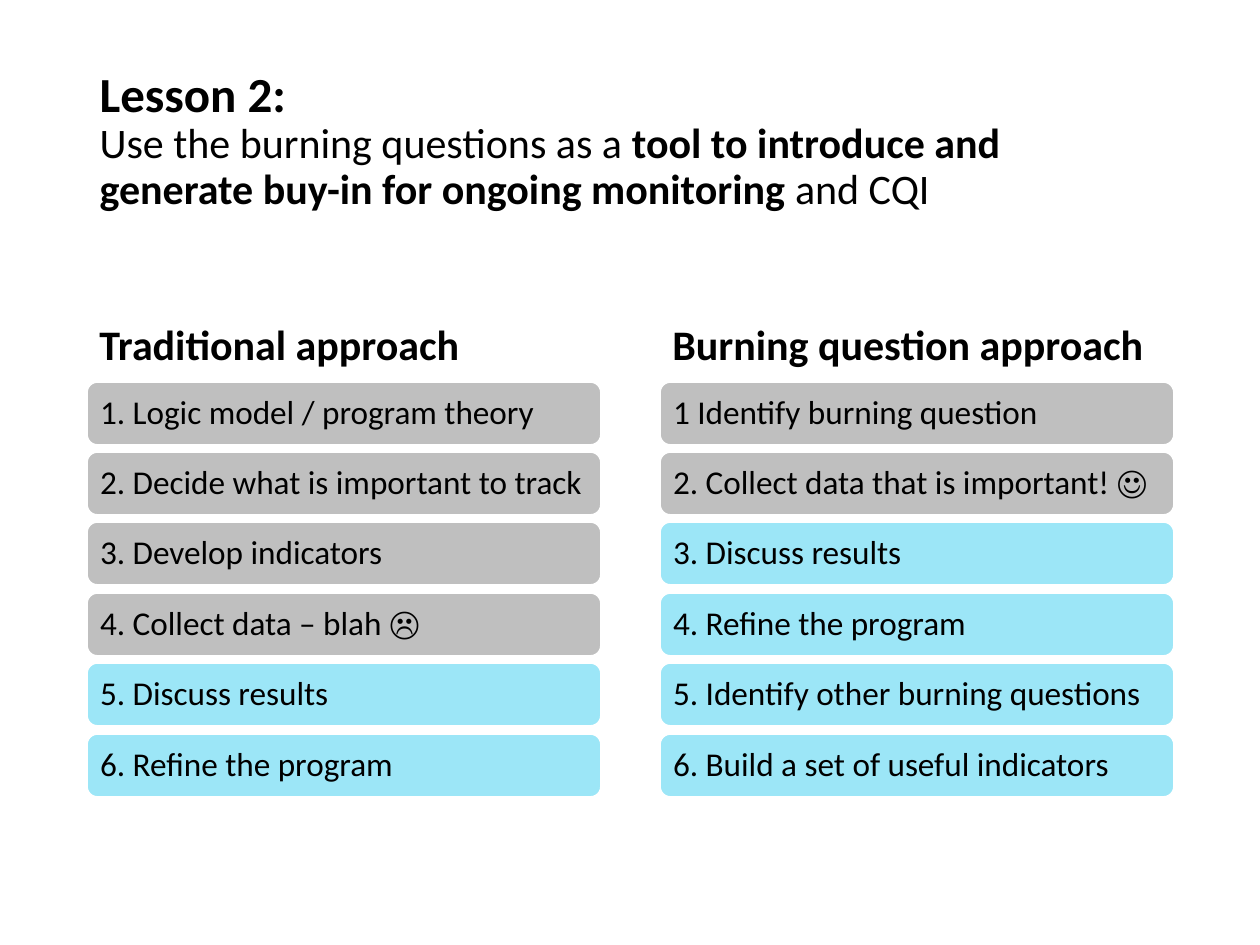
from copy import deepcopy

from pptx import Presentation
from pptx.dml.color import RGBColor as RGB
from pptx.enum.shapes import MSO_SHAPE as Shape
from pptx.enum.text import MSO_ANCHOR as Anchor, MSO_AUTO_SIZE as Auto, PP_ALIGN as Align
from pptx.util import Pt

SCALE = 914400 / 126
COLORS = {"ink": "000000", "gray": "BFBFBF", "blue": "9CE6F7", "edge": "FFFFFF"}


def px(n):
    return round(n * SCALE)


class Deck:
    font = "Calibri"

    def __init__(self, wide, high):
        self.prs = Presentation()
        self.prs.slide_width, self.prs.slide_height = px(wide), px(high)
        self.slide = self.prs.slides.add_slide(self.prs.slide_layouts[5])

    def color(self, name):
        return RGB.from_string(COLORS[name])

    def style(self, run, size, bold=False):
        font = run.font
        font.name, font.size, font.bold = self.font, Pt(size), bold
        font.color.rgb = self.color("ink")

    def frame(self, shape):
        frame = shape.text_frame
        frame.word_wrap = True
        frame.auto_size = Auto.NONE
        frame.vertical_anchor = Anchor.MIDDLE
        para = frame.paragraphs[0]
        para.alignment, para.line_spacing = Align.LEFT, 0.9
        return frame

    def title(self, x, y, w, h, head, parts):
        shape = self.slide.shapes.title
        shape.left, shape.top, shape.width, shape.height = map(px, (x, y, w, h))
        para = self.frame(shape).paragraphs[0]
        first = para.add_run()
        first.text = head
        self.style(first, 28, True)
        para.add_line_break()
        # The break takes the size of the heading line
        para._p.br_lst[0].append(deepcopy(first._r.rPr))
        for text, bold in parts:
            run = para.add_run()
            run.text = text
            self.style(run, 24, bold)

    def label(self, x, y, w, h, text):
        box = self.slide.shapes.add_textbox(*map(px, (x, y, w, h)))
        para = self.frame(box).paragraphs[0]
        para.text = text
        self.style(para.runs[0], 24, True)

    def step(self, x, y, w, h, text, fill):
        bar = self.slide.shapes.add_shape(Shape.ROUNDED_RECTANGLE, *map(px, (x, y, w, h)))
        bar.shadow.inherit = False
        bar.fill.solid()
        bar.fill.fore_color.rgb = self.color(fill)
        bar.line.color.rgb = self.color("edge")
        bar.line.width = Pt(1)
        frame = self.frame(bar)
        frame.margin_left = frame.margin_right = px(10)
        frame.margin_top = frame.margin_bottom = px(10)
        para = frame.paragraphs[0]
        para.text = text
        self.style(para.runs[0], 19)


# Left edge, heading, number of gray steps, steps
LISTS = [
    (87, "Traditional approach", 4, [
        "1. Logic model / program theory",
        "2. Decide what is important to track",
        "3. Develop indicators",
        "4. Collect data – blah ☹",
        "5. Discuss results",
        "6. Refine the program",
    ]),
    (660, "Burning question approach", 2, [
        "1 Identify burning question",
        "2. Collect data that is important! ☺",
        "3. Discuss results",
        "4. Refine the program",
        "5. Identify other burning questions",
        "6. Build a set of useful indicators",
    ]),
]
TOP, LAST, WIDE, HIGH = 382, 734, 514, 63


def main():
    deck = Deck(1260, 945)

    # Title
    deck.title(87, 50, 1086, 183, "Lesson 2: ", [
        ("Use the burning questions as a ", False),
        ("tool to introduce and generate buy-in for ongoing monitoring ", True),
        ("and CQI", False),
    ])

    # Two lists of steps under their headings
    for x, head, grays, steps in LISTS:
        deck.label(x, 322, WIDE, 49, head)
        for i, text in enumerate(steps):
            y = TOP + (LAST - TOP) * i // (len(steps) - 1)
            deck.step(x, y, WIDE, HIGH, text, "gray" if i < grays else "blue")

    deck.prs.save("out.pptx")


if __name__ == "__main__":
    main()
